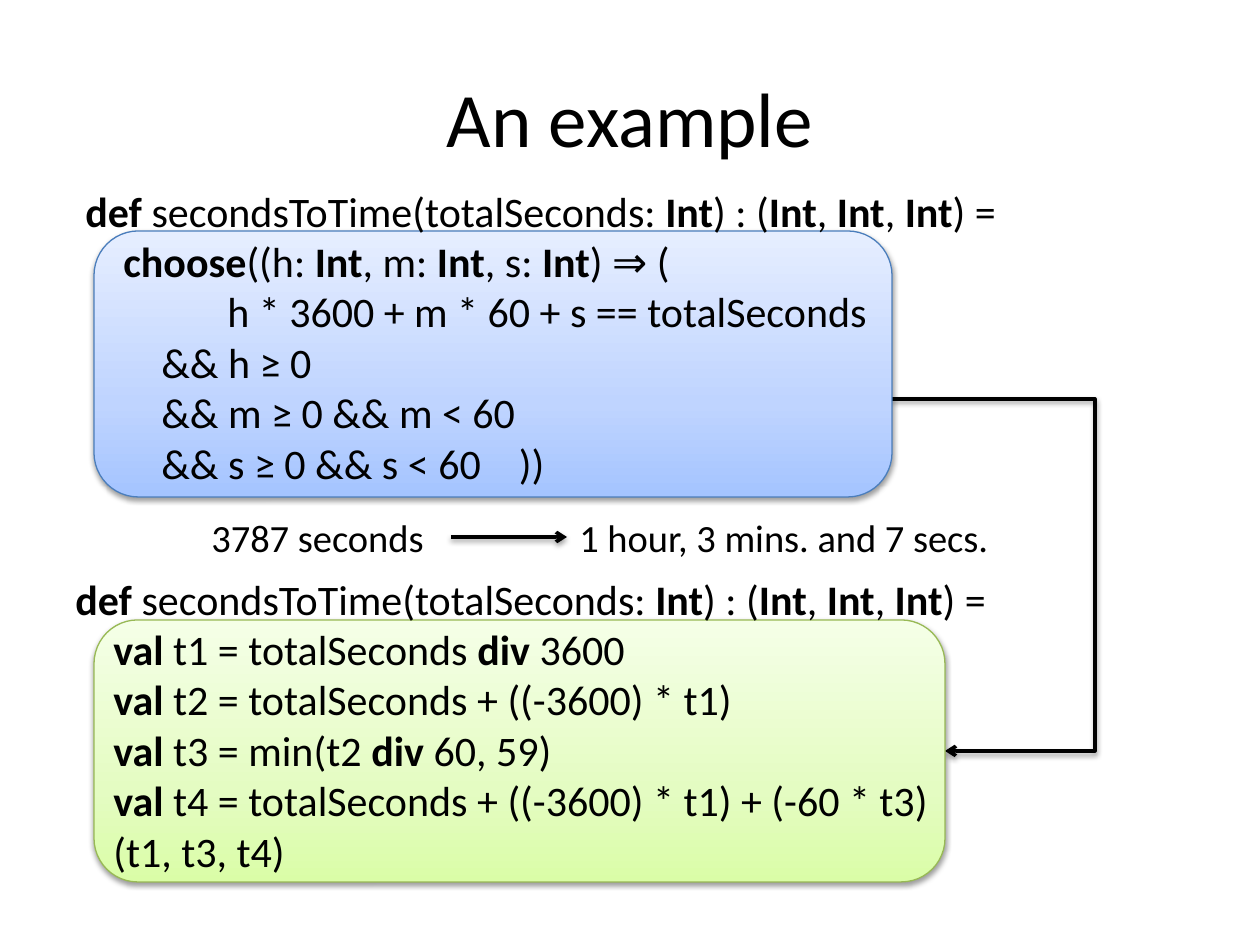
from copy import deepcopy
from pptx import Presentation
from pptx.dml.color import RGBColor
from pptx.enum.shapes import MSO_CONNECTOR, MSO_SHAPE
from pptx.enum.text import MSO_ANCHOR, PP_ALIGN
from pptx.oxml import parse_xml
from pptx.oxml.ns import nsdecls, qn
from pptx.util import Pt

PX = 914400 / 126
COLORS = {"ink": "000000", "blue": "4B7EBC", "green": "98B955"}
FADES = {
    "blue": [(0, "A4C4FF"), (0.35, "BFD4FF"), (1, "E6EEFF")],
    "green": [(0, "DAFDA7"), (0.35, "E4FCC2"), (1, "F5FFE7")],
}
TAB = 38  # one code indent, in px

# Bars switch bold on and off; a tilde is one wide gap
HEAD = (0, "|def |secondsToTime(totalSeconds: |Int|) : (|Int|, |Int|, |Int|) =")
SPEC = [
    HEAD,
    (TAB, "|choose|((h: |Int|, m: |Int|, s: |Int|) ⇒ ("),
    (142, "h * 3600 + m * 60 + s == totalSeconds"),
    (2 * TAB, "&& h ≥ 0"),
    (2 * TAB, "&& m ≥ 0 && m < 60"),
    (2 * TAB, "&& s ≥ 0 && s < 60~))"),
]
CODE = [
    HEAD,
    (TAB, "|val| t1 = totalSeconds |div| 3600"),
    (TAB, "|val |t2 = totalSeconds + ((-3600) * t1)"),
    (TAB, "|val |t3 = min(t2 |div| 60, 59)"),
    (TAB, "|val |t4 = totalSeconds + ((-3600) * t1) + (-60 * t3)"),
    (TAB, "(t1, t3, t4)"),
]


def px(*nums):
    return [round(n * PX) for n in nums]


def rgb(name):
    return RGBColor.from_string(COLORS[name])


def shade(item):
    """Give a shape or line its soft drop shadow."""
    props = item._element.spPr
    for old in props.findall(qn("a:effectLst")):
        props.remove(old)
    props.append(parse_xml(
        f'<a:effectLst {nsdecls("a")}><a:outerShdw blurRad="40000" dist="20000" '
        'dir="5400000" rotWithShape="0"><a:srgbClr val="000000">'
        '<a:alpha val="38000"/></a:srgbClr></a:outerShdw></a:effectLst>'))


def add_run(para, text, size, bold=False):
    run = para.add_run()
    run.text = text
    look = {"name": "Calibri", "size": Pt(size), "bold": bold}
    for key, val in look.items():
        setattr(run.font, key, val)
    run.font.color.rgb = rgb("ink")
    return run


def add_text(slide, box, lines, size, align=PP_ALIGN.LEFT, anchor=MSO_ANCHOR.TOP):
    frame = slide.shapes.add_textbox(*px(*box)).text_frame
    for key, val in {"word_wrap": True, "vertical_anchor": anchor}.items():
        setattr(frame, key, val)
    for row, (dent, line) in enumerate(lines):
        para = frame.add_paragraph() if row else frame.paragraphs[0]
        para.alignment = align
        para._p.get_or_add_pPr().set("marL", str(px(dent)[0]))
        for part, text in enumerate(line.split("|")):
            for spot, bit in enumerate(text.split("~")):
                if spot:
                    gap = add_run(para, " ", size)
                    gap.font._element.set("spc", "1630")
                if bit:
                    add_run(para, bit, size, part % 2 == 1)


def add_panel(slide, box, hue):
    panel = slide.shapes.add_shape(MSO_SHAPE.ROUNDED_RECTANGLE, *px(*box))
    panel.fill.gradient()
    panel.fill.gradient_angle = 90
    stops = panel._element.spPr.find(".//" + qn("a:gsLst"))
    stops.insert(1, deepcopy(stops[0]))
    for stop, (place, color) in zip(panel.fill.gradient_stops, FADES[hue]):
        stop.position = place
        stop.color.rgb = RGBColor.from_string(color)
    panel.line.color.rgb = rgb(hue)
    panel.line.width = Pt(0.75)
    shade(panel)


def add_arrow(slide, kind, ends):
    arrow = slide.shapes.add_connector(kind, *px(*ends))
    arrow.line.color.rgb = rgb("ink")
    arrow.line.width = Pt(2)
    arrow.line._get_or_add_ln().append(
        parse_xml(f'<a:tailEnd {nsdecls("a")} type="arrow"/>'))
    shade(arrow)
    return arrow


def add_link(slide, start, end, bend):
    """Run right from start to the bend, then down and back to end."""
    link = add_arrow(slide, MSO_CONNECTOR.ELBOW, (*start, *end))
    ratio = round((bend - start[0]) / (end[0] - start[0]) * 100000)
    guides = link._element.spPr.find(qn("a:prstGeom")).get_or_add_avLst()
    guides.append(parse_xml(
        f'<a:gd {nsdecls("a")} name="adj1" fmla="val {ratio}"/>'))


def add_case(slide, box):
    """Sample input, arrow and result in one row."""
    left, top, wide, high = box
    add_text(slide, (left, top, 252, high), [(0, "3787 seconds")], 22)
    add_text(slide, (left + 368, top, wide - 368, high),
             [(0, "1 hour, 3 mins. and 7 secs.")], 22)
    mid = top + high // 2
    add_arrow(slide, MSO_CONNECTOR.STRAIGHT, (left + 252, mid, left + 368, mid))


def main():
    deck = Presentation()
    deck.slide_width, deck.slide_height = px(1260, 945)
    slide = deck.slides.add_slide(deck.slide_layouts[6])

    # Link and panels behind the code
    add_link(slide, (892, 399), (945, 751), 1095)
    add_panel(slide, (94, 620, 851, 262), "green")
    add_panel(slide, (94, 231, 798, 266), "blue")

    # Title, code and sample
    add_text(slide, (63, 38, 1134, 157), [(0, "An example")], 44,
             PP_ALIGN.CENTER, MSO_ANCHOR.MIDDLE)
    add_text(slide, (73, 179, 1124, 318), SPEC, 24)
    add_text(slide, (63, 567, 945, 318), CODE, 24)
    add_case(slide, (199, 508, 819, 59))

    deck.save("out.pptx")


if __name__ == "__main__":
    main()
